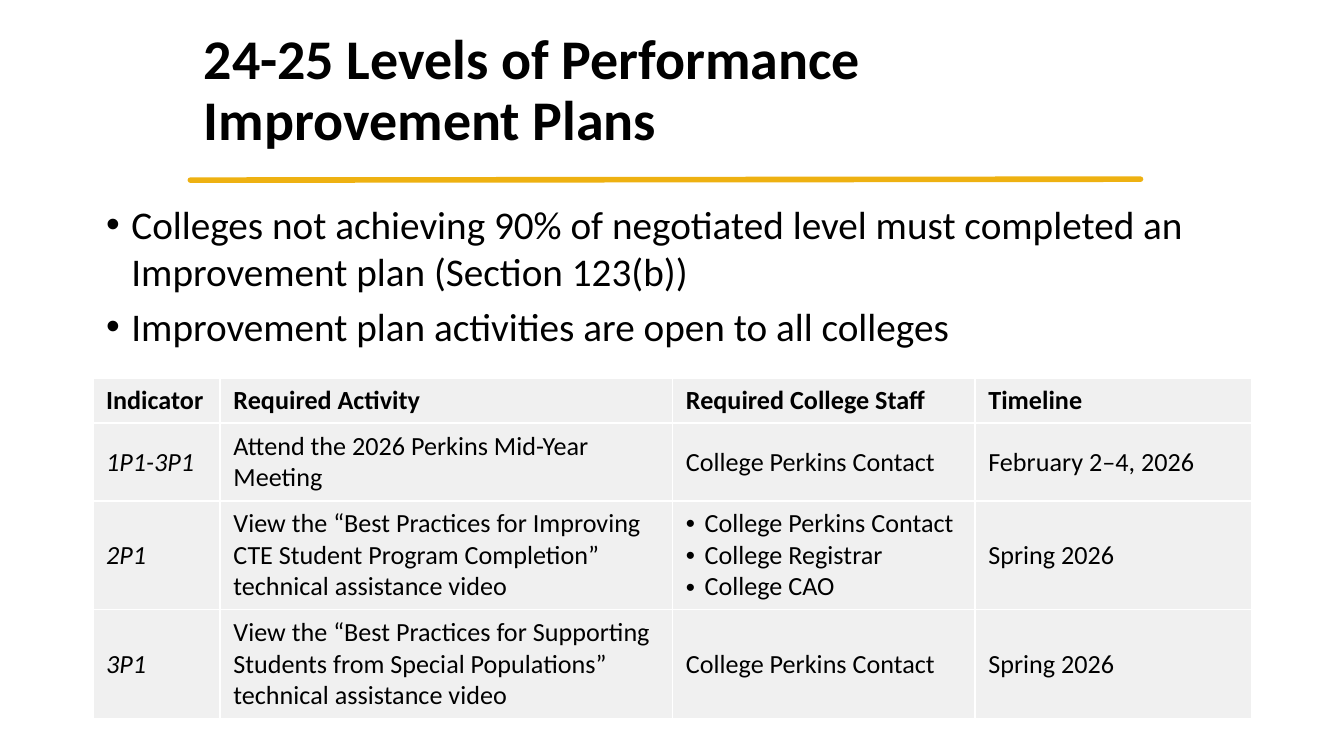
"""Build the slide on performance improvement plans."""
from dataclasses import dataclass

from lxml import etree
from pptx import Presentation
from pptx import util as u
from pptx.dml import color
from pptx.enum import shapes, text
from pptx.oxml import ns


@dataclass
class Theme:
    font: str = "Calibri"
    ink: str = "000000"
    gold: str = "EEB111"
    gray: str = "F0F0F0"
    white: str = "FFFFFF"
    head: float = 30
    body: float = 21
    cell: float = 14


def rgb(code):
    return color.RGBColor.from_string(code)


def node(root, tag, **attrs):
    item = etree.SubElement(root, ns.qn(tag))
    for key, value in attrs.items():
        item.set(key, str(value))
    return item


def put(frame, words, *, font, size, ink, bold=False, italic=False,
        anchor=text.MSO_ANCHOR.MIDDLE, lead=1.0, gap=0, hang=0):
    frame.word_wrap = True
    frame.vertical_anchor = anchor
    lines = [words] if isinstance(words, str) else words
    for i, line in enumerate(lines):
        para = frame.add_paragraph() if i else frame.paragraphs[0]
        para.text = line
        para.alignment = text.PP_ALIGN.LEFT
        para.line_spacing = lead
        para.space_before = u.Pt(gap if i else 0)
        if hang:
            props = para._p.get_or_add_pPr()
            props.set("marL", str(u.Pt(hang)))
            props.set("indent", str(-u.Pt(hang)))
            node(props, "a:buFont", typeface="Arial")
            node(props, "a:buChar", char="•")
        for run in para.runs:
            run.font.name = font
            run.font.size = u.Pt(size)
            run.font.bold = bold
            run.font.italic = italic
            run.font.color.rgb = rgb(ink)


class Deck:
    def __init__(self, theme, wide, high):
        self.theme = theme
        self.show = Presentation()
        self.show.slide_width, self.show.slide_height = u.Pt(wide), u.Pt(high)
        self.slide = self.show.slides.add_slide(self.show.slide_layouts[1])

    def label(self, frame, words, size, **style):
        put(frame, words, font=self.theme.font, size=size,
            ink=self.theme.ink, **style)

    def place(self, shape, box):
        shape.left, shape.top, shape.width, shape.height = map(u.Pt, box)
        shape.text_frame.auto_size = text.MSO_AUTO_SIZE.NONE
        return shape.text_frame

    def title(self, words, box):
        frame = self.place(self.slide.shapes.title, box)
        self.label(frame, words, self.theme.head, bold=True, lead=0.9)

    def points(self, items, box):
        frame = self.place(self.slide.placeholders[1], box)
        self.label(frame, items, self.theme.body, gap=4.5, hang=13.5,
                   anchor=text.MSO_ANCHOR.TOP)

    def rule(self, left, right, start, end):
        line = self.slide.shapes.add_connector(
            shapes.MSO_CONNECTOR.STRAIGHT,
            u.Pt(left), u.Pt(start), u.Pt(right), u.Pt(end))
        line.line.color.rgb = rgb(self.theme.gold)
        line.line.width = u.Pt(3)
        line.line._get_or_add_ln().set("cap", "rnd")
        node(line._element.spPr, "a:effectLst")

    def edge(self, cell):
        props = cell._tc.get_or_add_tcPr()
        for side in "LRTB":
            line = node(props, f"a:ln{side}", w=u.Pt(1))
            node(node(line, "a:solidFill"), "a:srgbClr", val=self.theme.white)

    def table(self, rows, left, top, cols, highs):
        grid = self.slide.shapes.add_table(
            len(rows), len(cols), u.Pt(left), u.Pt(top),
            u.Pt(sum(cols)), u.Pt(sum(highs))).table
        grid.horz_banding = False
        for col, wide in zip(grid.columns, cols):
            col.width = u.Pt(wide)
        for row, high in zip(grid.rows, highs):
            row.height = u.Pt(high)
        for r, row in enumerate(rows):
            for c, words in enumerate(row):
                cell = grid.cell(r, c)
                self.edge(cell)
                cell.fill.solid()
                cell.fill.fore_color.rgb = rgb(self.theme.gray)
                cell.vertical_anchor = text.MSO_ANCHOR.MIDDLE
                self.label(cell.text_frame, words, self.theme.cell,
                           bold=r == 0, italic=r > 0 and c == 0,
                           anchor=None,
                           hang=0 if isinstance(words, str) else 10)


def main():
    staff = "College Perkins Contact"
    rows = [
        ["Indicator", "Required Activity", "Required College Staff", "Timeline"],
        ["1P1-3P1", "Attend the 2026 Perkins Mid-Year Meeting", staff,
         "February 2–4, 2026"],
        ["2P1", "View the “Best Practices for Improving CTE Student Program "
         "Completion” technical assistance video",
         [staff, "College Registrar", "College CAO"], "Spring 2026"],
        ["3P1", "View the “Best Practices for Supporting Students from Special "
         "Populations” technical assistance video", staff, "Spring 2026"],
    ]
    deck = Deck(Theme(), 720, 405)
    deck.rule(102, 611, 96.5, 96)
    deck.title("24-25 Levels of Performance\vImprovement Plans",
               (102, 10, 580, 78.5))
    deck.points(["Colleges not achieving 90% of negotiated level must completed "
                 "an Improvement plan (Section 123(b))",
                 "Improvement plan activities are open to all colleges"],
                (49.7, 103.7, 620.6, 93))
    deck.table(rows, 49.7, 202.5, (68.2, 242.4, 162, 148.3), (24, 41.5, 58, 58))
    deck.show.save("out.pptx")


if __name__ == "__main__":
    main()
